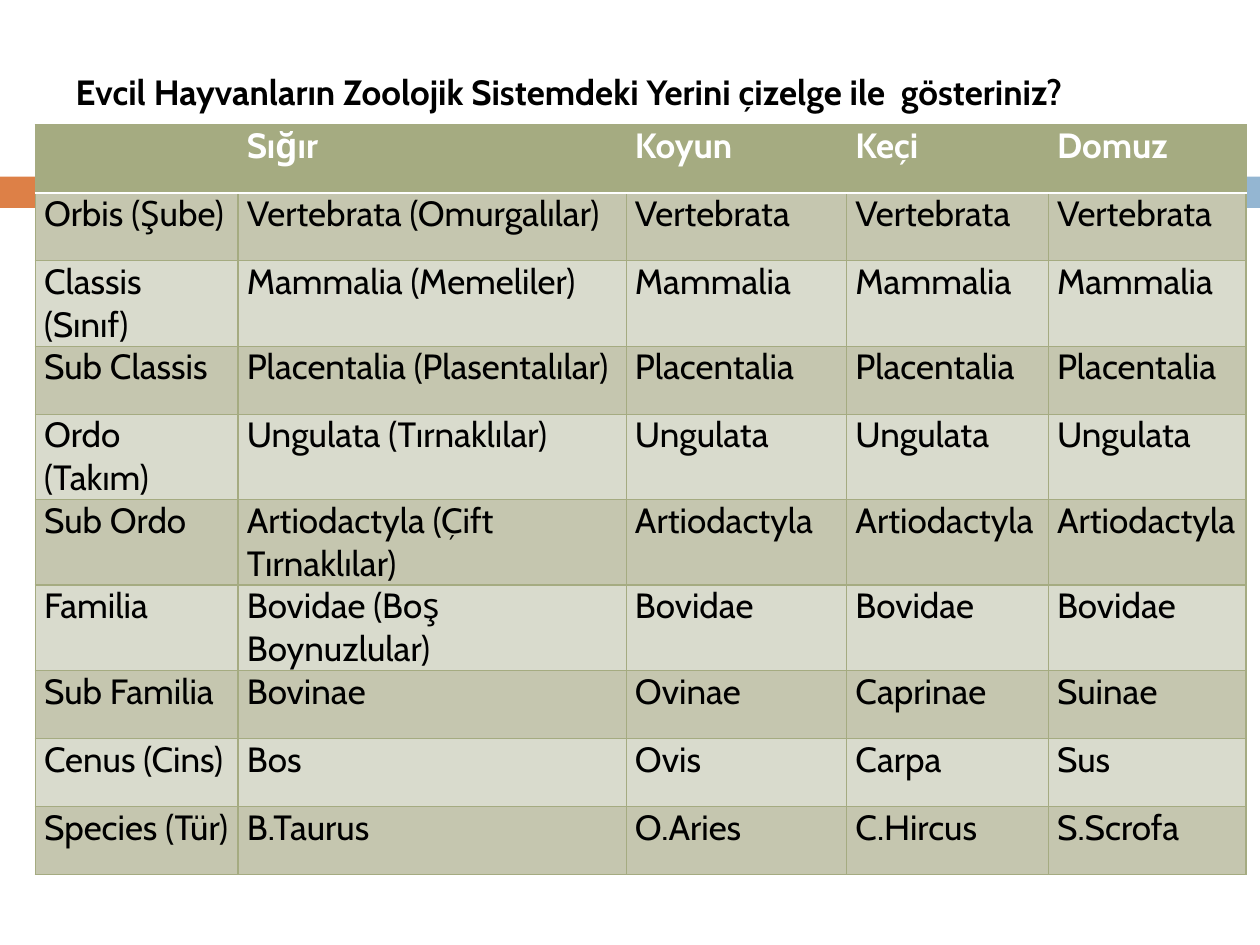
"""Build a slide that tabulates the zoological classification of farm animals."""
from dataclasses import dataclass

from lxml import etree
from pptx import Presentation
from pptx.dml.color import RGBColor
from pptx.enum.shapes import MSO_SHAPE
from pptx.enum.text import MSO_ANCHOR, PP_ALIGN
from pptx.oxml.ns import qn
from pptx.util import Inches, Pt

RECTANGLE = MSO_SHAPE.RECTANGLE
LEFT = PP_ALIGN.LEFT
MIDDLE = MSO_ANCHOR.MIDDLE
WIDTH, HEIGHT = Inches(10), Inches(7.5)
COLORS = {
    "orange": "DD8047",
    "blue": "94B6D2",
    "olive": "A5AB81",
    "dark_band": "C5C6AF",
    "light_band": "D9DBCD",
    "white": "FFFFFF",
    "black": "000000",
}
FONT = {"name": "Cabin", "size": Pt(20)}
CELL_FORMAT = {
    "margin_left": Inches(0.07),
    "margin_right": Inches(0.07),
    "margin_top": 0,
    "margin_bottom": 0,
}
COLUMN_WIDTHS = (1.61, 3.08, 1.75, 1.6, 1.57)
ROW_HEIGHT = Inches(0.54)
CLASSIFICATION = (
    ("", "Sığır", "Koyun", "Keçi", "Domuz"),
    ("Orbis (Şube)", "Vertebrata (Omurgalılar)") + ("Vertebrata",) * 3,
    ("Classis (Sınıf)", "Mammalia (Memeliler)") + ("Mammalia",) * 3,
    ("Sub Classis", "Placentalia (Plasentalılar)") + ("Placentalia",) * 3,
    ("Ordo (Takım)", "Ungulata (Tırnaklılar)") + ("Ungulata",) * 3,
    ("Sub Ordo", "Artiodactyla (Çift Tırnaklılar)") + ("Artiodactyla",) * 3,
    ("Familia", "Bovidae (Boş Boynuzlular)") + ("Bovidae",) * 3,
    ("Sub Familia", "Bovinae", "Ovinae", "Caprinae", "Suinae"),
    ("Cenus (Cins)", "Bos", "Ovis", "Carpa", "Sus"),
    ("Species (Tür)", "B.Taurus", "O.Aries", "C.Hircus", "S.Scrofa"),
)


@dataclass(frozen=True)
class Box:
    """Position and size as shares of the slide."""

    left: float
    top: float
    width: float
    height: float

    def lengths(self) -> dict:
        """Return the box in slide units."""
        return {
            "left": int(self.left * WIDTH),
            "top": int(self.top * HEIGHT),
            "width": int(self.width * WIDTH),
            "height": int(self.height * HEIGHT),
        }


@dataclass(frozen=True)
class Strip:
    """A coloured strip behind the table."""

    box: Box
    color: str


STRIPS = (
    Strip(Box(0, 0.187, 0.058, 0.033), "orange"),
    Strip(Box(0.065, 0.187, 0.935, 0.033), "blue"),
)
TITLE_BOX = Box(0.05, 0.04, 0.9, 0.113)
TABLE_BOX = Box(0.028, 0.132, 0.962, 0.72)


def apply(target, values: dict) -> None:
    """Set every attribute in values on the target."""
    for name, value in values.items():
        setattr(target, name, value)


def paint(fill, color: str) -> None:
    """Give a fill one solid colour."""
    fill.solid()
    fill.fore_color.rgb = RGBColor.from_string(COLORS[color])


def style_font(font, color: str, bold: bool) -> None:
    """Format text in the slide's typeface."""
    apply(font, FONT | {"bold": bold})
    font.color.rgb = RGBColor.from_string(COLORS[color])


def draw_strip(slide, strip: Strip) -> None:
    """Draw one strip without an outline."""
    bar = slide.shapes.add_shape(RECTANGLE, **strip.box.lengths())
    bar.shadow.inherit = False
    paint(bar.fill, strip.color)
    bar.line.fill.background()


def write_title(slide) -> None:
    """Place and format the title."""
    title = slide.shapes.title
    apply(title, TITLE_BOX.lengths())
    frame = title.text_frame
    apply(frame, {"vertical_anchor": MIDDLE, "word_wrap": True})
    heading = frame.paragraphs[0]
    heading.alignment = LEFT
    run = heading.add_run()
    run.text = "Evcil Hayvanların Zoolojik Sistemdeki Yerini çizelge ile  gösteriniz?"
    style_font(run.font, "black", True)


def border_cell(cell, row: int) -> None:
    """Line a cell in olive, with a white rule below the header."""
    properties = cell._tc.get_or_add_tcPr()
    for place, side in enumerate(("L", "R", "T", "B")):
        ruled = (row, side) in ((0, "B"), (1, "T"))
        color, width = ("white", 1.5) if ruled else ("olive", 0.79)
        line = etree.Element(qn(f"a:ln{side}"), w=str(int(Pt(width))))
        solid = etree.SubElement(line, qn("a:solidFill"))
        etree.SubElement(solid, qn("a:srgbClr"), val=COLORS[color])
        properties.insert(place, line)


def fill_cell(cell, row: int, words: str) -> None:
    """Write and format one table cell."""
    header = row == 0
    band = "olive" if header else "dark_band" if row % 2 else "light_band"
    apply(cell, CELL_FORMAT)
    paint(cell.fill, band)
    border_cell(cell, row)
    if words:
        paragraph = cell.text_frame.paragraphs[0]
        paragraph.space_after = Pt(6)
        run = paragraph.add_run()
        run.text = words
        style_font(run.font, "white" if header else "black", header)


def draw_table(slide) -> None:
    """Draw the classification table."""
    table = slide.shapes.add_table(
        len(CLASSIFICATION), len(COLUMN_WIDTHS), **TABLE_BOX.lengths()
    ).table
    for column, width in zip(table.columns, COLUMN_WIDTHS):
        column.width = Inches(width)
    for row, entries in enumerate(CLASSIFICATION):
        table.rows[row].height = ROW_HEIGHT
        for column, words in enumerate(entries):
            fill_cell(table.cell(row, column), row, words)


def main() -> None:
    """Build and save the presentation."""
    deck = Presentation()
    apply(deck, {"slide_width": WIDTH, "slide_height": HEIGHT})
    slide = deck.slides.add_slide(deck.slide_layouts[5])
    for strip in STRIPS:
        draw_strip(slide, strip)
    write_title(slide)
    draw_table(slide)
    deck.save("out.pptx")


if __name__ == "__main__":
    main()
